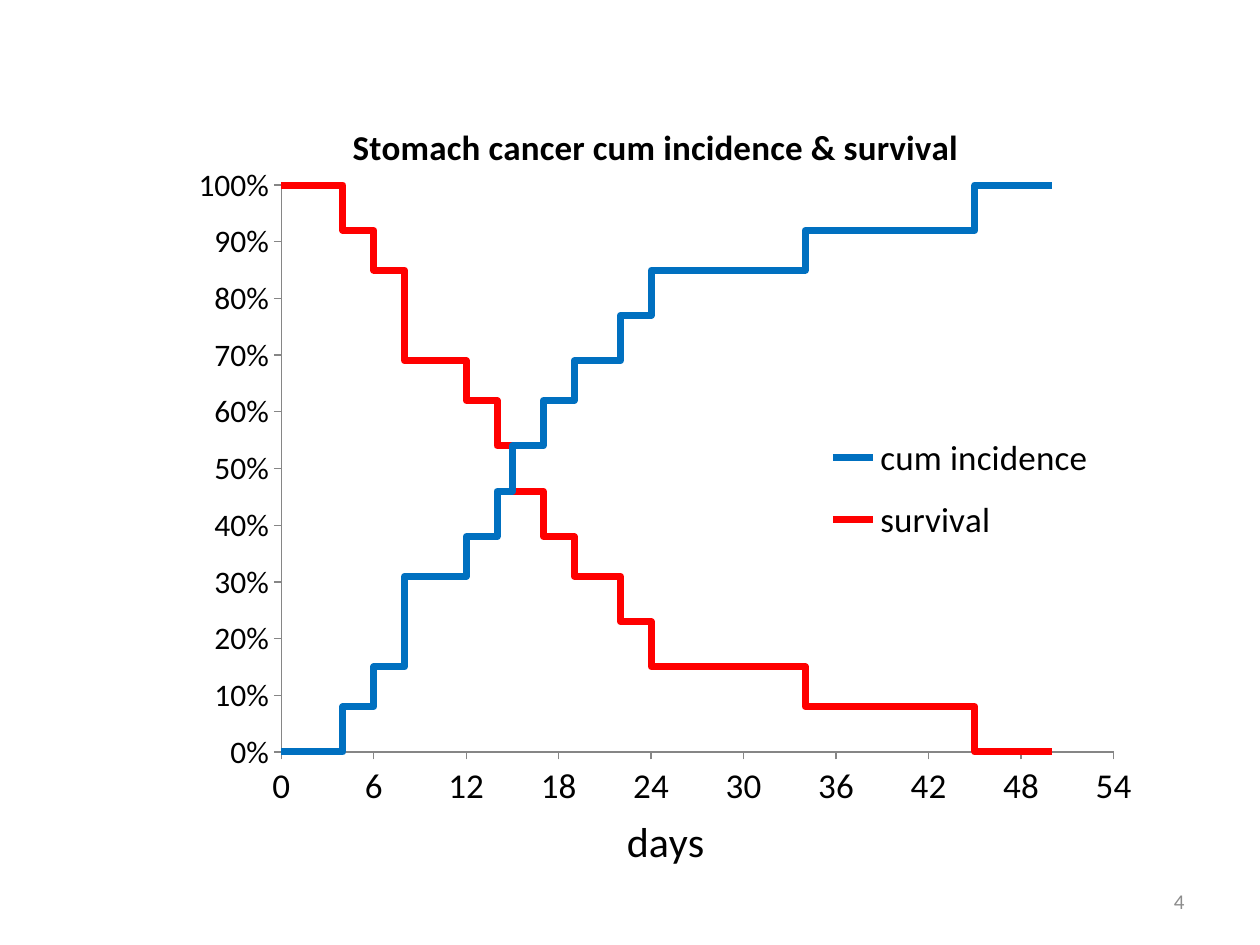
"""Build a slide with step curves of cumulative incidence and survival."""
from lxml import etree
from pptx import Presentation
from pptx.chart.data import XyChartData
from pptx.dml.color import RGBColor
from pptx.enum import chart as ch, text
from pptx.util import Inches, Pt

COLORS = {"text": "000000", "axis": "868686", "number": "8C8C8C",
          "cum incidence": "0070C0", "survival": "FF0000"}
FONT = "Calibri"
TITLE = "Stomach cancer cum incidence & survival"
EVENTS = [(4, 0.08), (6, 0.15), (8, 0.31), (12, 0.38), (14, 0.46), (15, 0.54),
          (17, 0.62), (19, 0.69), (22, 0.77), (24, 0.85), (34, 0.92), (45, 1)]
LAST_DAY = 50
NS = "http://schemas.openxmlformats.org/drawingml/2006/chart"


def step_points():
    points, level = [(0, 0)], 0
    for day, share in EVENTS:
        points += [(day, level), (day, share)]
        level = share
    return points + [(LAST_DAY, level)]


def set_font(font, size, color="text", bold=False):
    font.name, font.size, font.bold = FONT, Pt(size), bold
    font.color.rgb = RGBColor.from_string(COLORS[color])


def write(tf, words, size, color="text", bold=False, align=None):
    p = tf.paragraphs[0]
    p.alignment = align
    r = p.add_run()
    r.text = words
    set_font(r.font, size, color, bold)


def place(element, index, inner=False, **box):
    for old in element.findall(f"{{{NS}}}layout"):
        element.remove(old)
    layout = etree.Element(f"{{{NS}}}layout")
    manual = etree.SubElement(layout, f"{{{NS}}}manualLayout")
    settings = {"layoutTarget": "inner"} if inner else {}
    settings.update(xMode="edge", yMode="edge", **box)
    for name, value in settings.items():
        etree.SubElement(manual, f"{{{NS}}}{name}", val=str(value))
    element.insert(index, layout)


def format_axis(axis, size, top, step):
    axis.minimum_scale, axis.maximum_scale, axis.major_unit = 0, top, step
    axis.has_major_gridlines = False
    axis.major_tick_mark = ch.XL_TICK_MARK.OUTSIDE
    axis.format.line.color.rgb = RGBColor.from_string(COLORS["axis"])
    axis.format.line.width = Pt(0.75)
    set_font(axis.tick_labels.font, size)


def add_curves(slide):
    data = XyChartData()
    points = step_points()
    curves = {"cum incidence": points,
              "survival": [(day, round(1 - share, 2)) for day, share in points]}
    for name, values in curves.items():
        series = data.add_series(name)
        for day, share in values:
            series.add_data_point(day, share)
    chart = slide.shapes.add_chart(
        ch.XL_CHART_TYPE.XY_SCATTER_LINES_NO_MARKERS, Inches(1), Inches(0.67),
        Inches(8.33), Inches(6.33), data).chart
    set_font(chart.font, 14)
    plot = chart.plots[0]
    plot.vary_by_categories = False
    for s in plot.series:
        s.smooth = False
        s.marker.style = ch.XL_MARKER_STYLE.NONE
        s.format.line.width = Pt(4)
        s.format.line.color.rgb = RGBColor.from_string(COLORS[s.name])

    days, shares = chart.category_axis, chart.value_axis
    format_axis(days, 20, 54, 6)
    format_axis(shares, 18, 1, 0.1)
    shares.tick_labels.number_format = "0%"
    shares.tick_labels.number_format_is_linked = False
    write(days.axis_title.text_frame, "days", 24)
    place(days.axis_title._element, 1, x=0.47, y=0.91)

    chart.has_title = True
    write(chart.chart_title.text_frame, TITLE, 20, bold=True)
    chart.chart_title.include_in_layout = True
    place(chart.chart_title._element, 1, x=0.21, y=0.04)

    chart.has_legend = True
    legend = chart.legend
    legend.position = ch.XL_LEGEND_POSITION.RIGHT
    legend.include_in_layout = False
    set_font(legend.font, 20)
    place(legend._element, 1, x=0.63, y=0.42, w=0.33, h=0.18)
    plot_area = chart._chartSpace.chart.plotArea
    place(plot_area, 0, inner=True, x=0.148, y=0.127, w=0.793, h=0.715)


def main():
    prs = Presentation()
    prs.slide_width, prs.slide_height = Inches(10), Inches(7.5)
    slide = prs.slides.add_slide(prs.slide_layouts[6])
    add_curves(slide)
    number = slide.shapes.add_textbox(
        Inches(7.17), Inches(6.95), Inches(2.33), Inches(0.4))
    tf = number.text_frame
    tf.word_wrap = True
    tf.vertical_anchor = text.MSO_ANCHOR.MIDDLE
    write(tf, "4", 12, "number", align=text.PP_ALIGN.RIGHT)
    prs.save("out.pptx")


if __name__ == "__main__":
    main()
